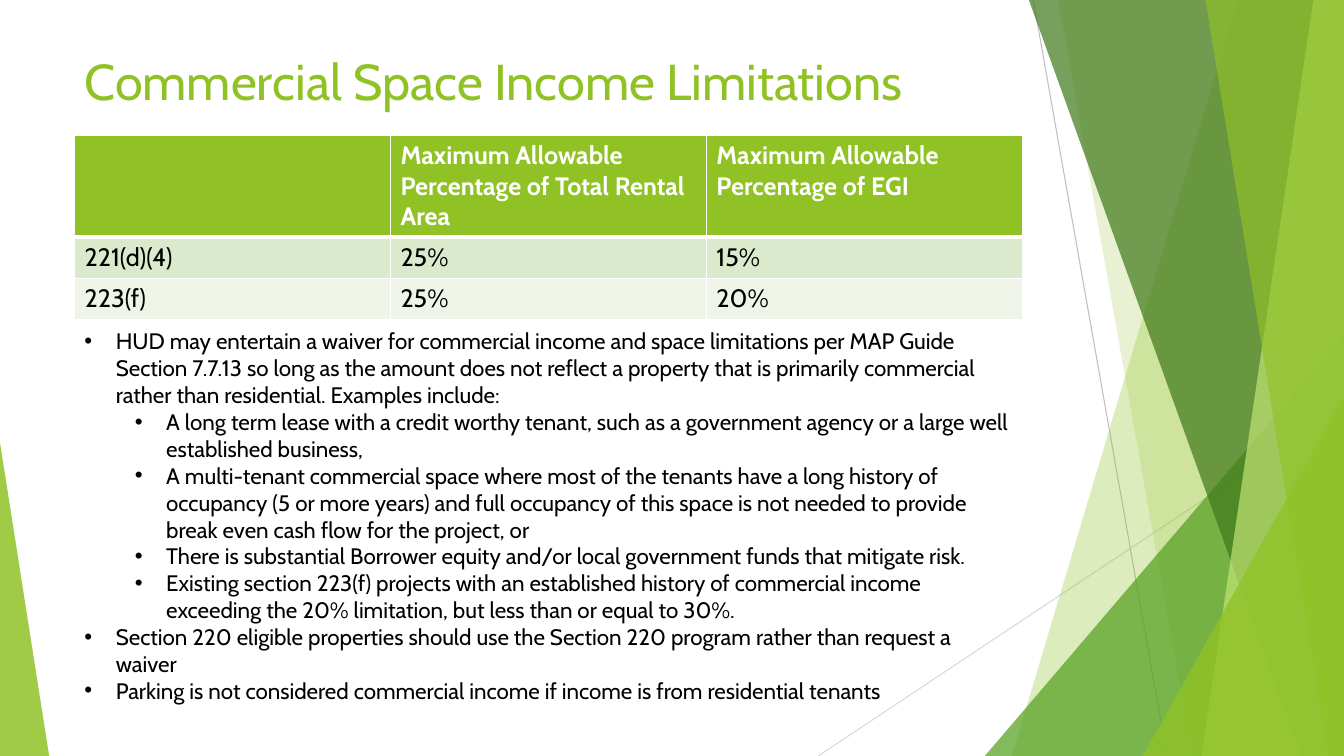
"""Build the slide on commercial space income limitations."""
from dataclasses import dataclass
from typing import Any, NamedTuple

from lxml.etree import SubElement
from pptx import Presentation
from pptx.dml.color import RGBColor
from pptx.enum.shapes import MSO_CONNECTOR, MSO_SHAPE
from pptx.enum.text import MSO_ANCHOR, MSO_AUTO_SIZE, PP_ALIGN
from pptx.oxml.ns import qn
from pptx.util import Cm, Pt


@dataclass(frozen=True)
class Theme:
    font: str = "Cabin"
    green: str = "90C226"
    leaf: str = "54A021"
    forest: str = "3F7819"
    lime: str = "C0E474"
    white: str = "FFFFFF"
    black: str = "000000"
    row_fills: tuple[str, ...] = ("90C226", "DBE9CD", "EEF4E8")
    title_size: int = 36
    table_size: int = 18
    body_size: int = 16


class Ray(NamedTuple):
    start: tuple[float, float]
    end: tuple[float, float]
    color: str


class Band(NamedTuple):
    top_x: float
    bottom_x: float
    color: str
    opacity: int


class Wedge(NamedTuple):
    left: float
    top: float
    width: float
    apex: float
    color: str
    opacity: int


class Bullet(NamedTuple):
    text: str
    level: int
    indent: float


THEME = Theme()
WIDTH, HEIGHT = 33.87, 19.05
LEFT, CONTENT_WIDTH = 1.88, 23.88
HANGING = 0.79
OUTER, INNER = HANGING, HANGING + 1.27

RAYS = (
    Ray((26.04, 0), (29.41, HEIGHT), "BFBFBF"),
    Ray((WIDTH, 10.24), (20.62, HEIGHT), "D9D9D9"),
)
FACETS = (
    Band(31.19, 25.5, THEME.green, 30),
    Band(26.67, 30.05, THEME.green, 20),
    Wedge(24.82, 8.46, 9.05, 1, THEME.leaf, 72),
    Band(25.93, 32.79, THEME.forest, 70),
    Band(33.1, 30.28, THEME.lime, 70),
    Band(30.38, 33.48, THEME.green, 65),
    Wedge(28.8, 9.98, 5.07, 1, THEME.green, 80),
    Wedge(0, 11.15, 1.24, 0, THEME.green, 85),
)
LIMITS = (
    ("", "Maximum Allowable Percentage of Total Rental Area",
     "Maximum Allowable Percentage of EGI"),
    ("221(d)(4)", "25%", "15%"),
    ("223(f)", "25%", "20%"),
)
ROW_HEIGHTS = (2.52, 1.04, 1.04)
BULLETS = (
    Bullet("HUD may entertain a waiver for commercial income and space limitations per MAP Guide "
           "Section 7.7.13 so long as the amount does not reflect a property that is primarily "
           "commercial rather than residential. Examples include:", 0, OUTER),
    Bullet("A long term lease with a credit worthy tenant, such as a government agency or a "
           "large well established business,", 1, INNER),
    Bullet("A multi-tenant commercial space where most of the tenants have a long history of "
           "occupancy (5 or more years) and full occupancy of this space is not needed to "
           "provide break even cash flow for the project, or", 1, INNER),
    Bullet("There is substantial Borrower equity and/or local government funds that mitigate "
           "risk.", 1, INNER),
    Bullet("Existing section 223(f) projects with an established history of commercial income "
           "exceeding the 20% limitation, but less than or equal to 30%.", 1, INNER),
    Bullet("Section 220 eligible properties should use the Section 220 program rather than "
           "request a waiver", 1, OUTER),
    Bullet("Parking is not considered commercial income if income is from residential tenants",
           1, OUTER),
)


def apply(target: Any, values: dict[str, Any]) -> None:
    for name, value in values.items():
        setattr(target, name, value)


def write(paragraph: Any, text: str, size: int, color: str, bold: bool = False) -> None:
    run = paragraph.add_run()
    run.text = text
    apply(run.font, {"name": THEME.font, "size": Pt(size), "bold": bold})
    run.font.color.rgb = RGBColor.from_string(color)


def draw_ray(slide: Any, ray: Ray) -> None:
    points = (Cm(value) for value in (*ray.start, *ray.end))
    connector = slide.shapes.add_connector(MSO_CONNECTOR.STRAIGHT, *points)
    connector.line.color.rgb = RGBColor.from_string(ray.color)
    connector.line.width = Pt(0.75)
    SubElement(connector.element.spPr, qn("a:effectLst"))


def draw_facet(slide: Any, facet: Band | Wedge) -> None:
    if isinstance(facet, Band):
        builder = slide.shapes.build_freeform(Cm(facet.top_x), 0)
        corners = ((WIDTH, 0), (WIDTH, HEIGHT), (facet.bottom_x, HEIGHT))
        builder.add_line_segments([(Cm(x), Cm(y)) for x, y in corners], close=True)
        shape = builder.convert_to_shape()
    else:
        shape = slide.shapes.add_shape(
            MSO_SHAPE.ISOSCELES_TRIANGLE, Cm(facet.left), Cm(facet.top),
            Cm(facet.width), Cm(HEIGHT - facet.top))
        shape.adjustments[0] = facet.apex
    shape.shadow.inherit = False
    shape.line.fill.background()
    shape.fill.solid()
    shape.fill.fore_color.rgb = RGBColor.from_string(facet.color)
    color = next(shape.element.iter(qn("a:srgbClr")))
    SubElement(color, qn("a:alpha"), val=str(facet.opacity * 1000))


def place_title(slide: Any, text: str) -> None:
    title = slide.shapes.title
    apply(title, {"left": Cm(LEFT), "top": Cm(1.14), "width": Cm(CONTENT_WIDTH),
                  "height": Cm(3.66)})
    apply(title.text_frame, {"vertical_anchor": MSO_ANCHOR.TOP, "word_wrap": True,
                             "auto_size": MSO_AUTO_SIZE.NONE})
    paragraph = title.text_frame.paragraphs[0]
    paragraph.alignment = PP_ALIGN.LEFT
    write(paragraph, text, THEME.title_size, THEME.green)
    title.element.getparent().append(title.element)


def add_border(cell: Any, side: str, width: int) -> None:
    properties = cell._tc.get_or_add_tcPr()
    line = SubElement(properties, qn(f"a:ln{side}"), w=str(Pt(width)))
    fill = SubElement(line, qn("a:solidFill"))
    SubElement(fill, qn("a:srgbClr"), val=THEME.white)


def draw_table(slide: Any) -> None:
    frame = slide.shapes.add_table(len(LIMITS), len(LIMITS[0]), Cm(LEFT), Cm(3.4),
                                   Cm(CONTENT_WIDTH), Cm(sum(ROW_HEIGHTS)))
    for row_index, texts in enumerate(LIMITS):
        header = row_index == 0
        frame.table.rows[row_index].height = Cm(ROW_HEIGHTS[row_index])
        widths = {"L": 1, "R": 1, "T": 3 if row_index == 1 else 1, "B": 3 if header else 1}
        for column_index, text in enumerate(texts):
            cell = frame.table.cell(row_index, column_index)
            for side, width in widths.items():
                add_border(cell, side, width)
            cell.fill.solid()
            cell.fill.fore_color.rgb = RGBColor.from_string(THEME.row_fills[row_index])
            if text:
                write(cell.text_frame.paragraphs[0], text, THEME.table_size,
                      THEME.white if header else THEME.black, header)


def draw_bullets(slide: Any) -> None:
    box = slide.shapes.add_textbox(Cm(LEFT), Cm(8.13), Cm(CONTENT_WIDTH), Cm(10.52))
    text_frame = box.text_frame
    apply(text_frame, {"word_wrap": True, "auto_size": MSO_AUTO_SIZE.SHAPE_TO_FIT_TEXT})
    for index, bullet in enumerate(BULLETS):
        paragraph = text_frame.add_paragraph() if index else text_frame.paragraphs[0]
        paragraph.level = bullet.level
        write(paragraph, bullet.text, THEME.body_size, THEME.black)
        properties = paragraph._p.get_or_add_pPr()
        properties.set("marL", str(Cm(bullet.indent)))
        properties.set("indent", str(-Cm(HANGING)))
        SubElement(properties, qn("a:buFont"), typeface="Arial")
        SubElement(properties, qn("a:buChar"), char="•")


def main() -> None:
    presentation = Presentation()
    apply(presentation, {"slide_width": Cm(WIDTH), "slide_height": Cm(HEIGHT)})
    slide = presentation.slides.add_slide(presentation.slide_layouts.get_by_name("Title Only"))
    for ray in RAYS:
        draw_ray(slide, ray)
    for facet in FACETS:
        draw_facet(slide, facet)
    place_title(slide, "Commercial Space Income Limitations")
    draw_table(slide)
    draw_bullets(slide)
    presentation.save("out.pptx")


if __name__ == "__main__":
    main()
